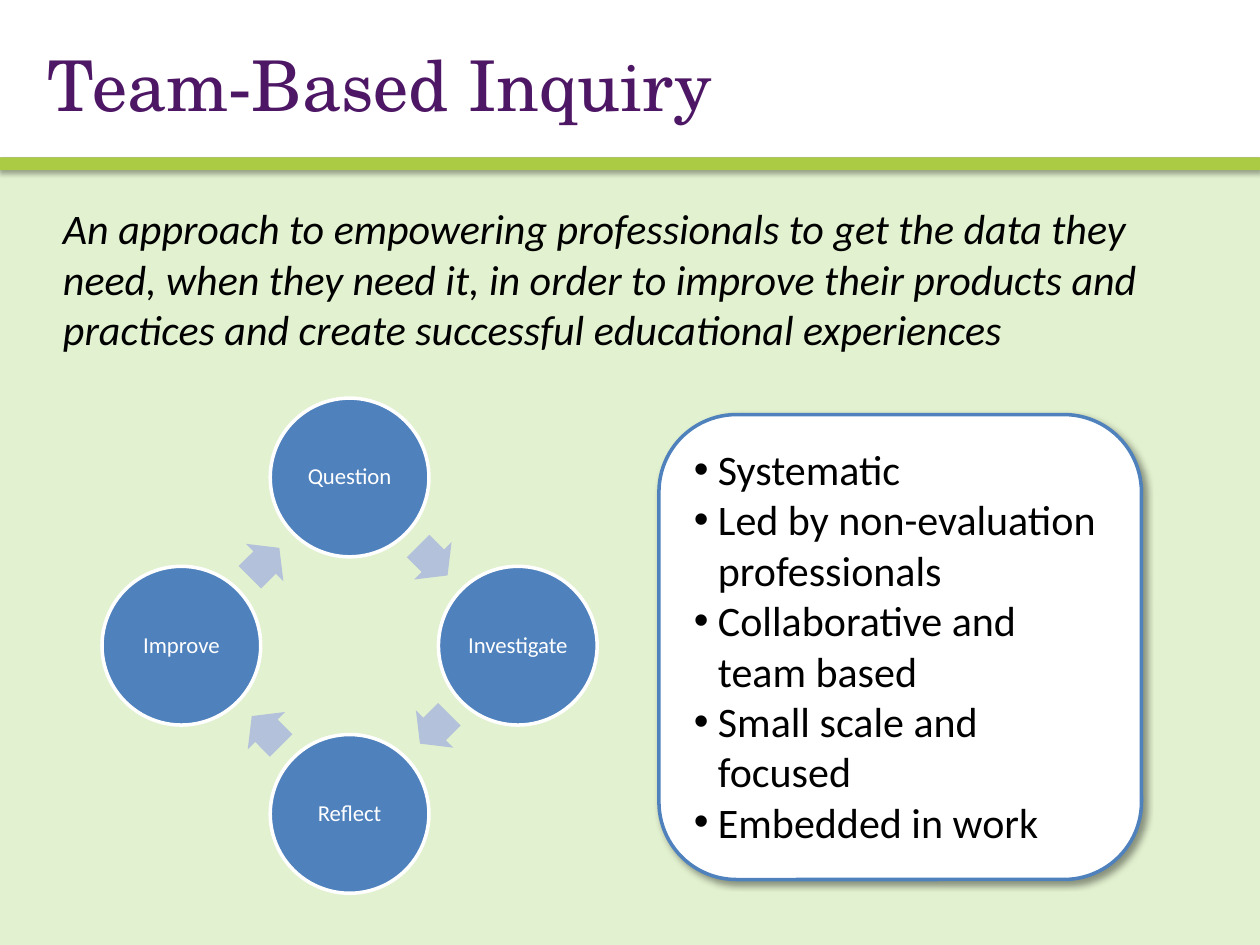
from dataclasses import dataclass
from math import cos, radians, sin

from lxml import etree
from pptx import Presentation
from pptx.dml.color import RGBColor
from pptx.enum.shapes import MSO_SHAPE
from pptx.enum.text import MSO_ANCHOR, MSO_AUTO_SIZE, PP_ALIGN
from pptx.oxml.ns import qn
from pptx.util import Inches, Pt

RECTANGLE = MSO_SHAPE.RECTANGLE
OVAL = MSO_SHAPE.OVAL
ARROW = MSO_SHAPE.RIGHT_ARROW
ROUNDED = MSO_SHAPE.ROUNDED_RECTANGLE
TOP, MIDDLE = MSO_ANCHOR.TOP, MSO_ANCHOR.MIDDLE
LEFT, CENTER = PP_ALIGN.LEFT, PP_ALIGN.CENTER
FIT_SHAPE = MSO_AUTO_SIZE.SHAPE_TO_FIT_TEXT


@dataclass(frozen=True)
class Theme:
    background: str = "E2F1CF"
    white: str = "FFFFFF"
    black: str = "000000"
    green: str = "ABCB45"
    purple: str = "4E1765"
    blue: str = "4F81BD"
    pale_blue: str = "B3C1DB"
    heading_font: str = "TeX Gyre Schola"
    body_font: str = "Calibri"
    title_size: int = 40
    body_size: int = 24
    step_size: int = 13
    line_width: int = 2


THEME = Theme()
BAND_SHADOW = {"alpha": 35, "blur": 3.1, "distance": 1.8, "angle": 90}
CARD_SHADOW = {"alpha": 40, "blur": 4, "distance": 3, "angle": 45}

TITLE = "Team-Based Inquiry"
SUMMARY = (
    "An approach to empowering professionals to get the data they need, "
    "when they need it, in order to improve their products and practices "
    "and create successful educational experiences"
)
STEPS = ["Question", "Investigate", "Reflect", "Improve"]
TRAITS = [
    "Systematic",
    "Led by non-evaluation professionals",
    "Collaborative and team based",
    "Small scale and focused",
    "Embedded in work",
]


def color(value):
    return RGBColor.from_string(value)


def add_shadow(shape, alpha, blur, distance, angle):
    effects = shape._element.spPr.find(qn("a:effectLst"))
    outer = etree.SubElement(
        effects, qn("a:outerShdw"), blurRad=str(Pt(blur)),
        dist=str(Pt(distance)), dir=str(angle * 60000), rotWithShape="0")
    tint = etree.SubElement(outer, qn("a:srgbClr"), val=THEME.black)
    etree.SubElement(tint, qn("a:alpha"), val=str(alpha * 1000))


def add_figure(slide, kind, box, fill, line=None, shadow=None):
    shape = slide.shapes.add_shape(kind, *map(Inches, box))
    shape.shadow.inherit = False
    shape.fill.solid()
    shape.fill.fore_color.rgb = color(fill)
    if line:
        shape.line.color.rgb = color(line)
        shape.line.width = Pt(THEME.line_width)
    else:
        shape.line.fill.background()
    if shadow:
        add_shadow(shape, **shadow)
    return shape


def write_text(shape, lines, frame_format, font_format, font_color, paragraph_format):
    frame = shape.text_frame
    frame.word_wrap = True
    for name, value in frame_format.items():
        setattr(frame, name, value)
    for index, line in enumerate(lines):
        paragraph = frame.add_paragraph() if index else frame.paragraphs[0]
        for name, value in paragraph_format.items():
            setattr(paragraph, name, value)
        run = paragraph.add_run()
        run.text = line
        for name, value in font_format.items():
            setattr(run.font, name, value)
        run.font.color.rgb = color(font_color)


def margins(size):
    sides = ("left", "top", "right", "bottom")
    return {f"margin_{side}": Inches(size) for side in sides}


def add_bullet(paragraph, indent):
    properties = paragraph._p.get_or_add_pPr()
    properties.set("marL", str(Inches(indent)))
    properties.set("indent", str(-Inches(indent)))
    etree.SubElement(properties, qn("a:buFont"), typeface="Arial")
    etree.SubElement(properties, qn("a:buChar"), char="•")


def add_header(slide, left, top, width, height):
    stripe = 0.1
    band = height - stripe
    add_figure(slide, RECTANGLE, (left, top, width, band), THEME.white,
               shadow=BAND_SHADOW)
    add_figure(slide, RECTANGLE, (left, top + band, width, stripe), THEME.green,
               shadow=BAND_SHADOW)
    title_box = (left + 0.28, top + 0.3, width - 0.53, 0.81)
    title = slide.shapes.add_textbox(*map(Inches, title_box))
    write_text(title, [TITLE], {"vertical_anchor": MIDDLE},
               {"name": THEME.heading_font, "size": Pt(THEME.title_size)},
               THEME.purple, {"line_spacing": 0.9})


def add_summary(slide, *box):
    summary = slide.shapes.add_textbox(*map(Inches, box))
    write_text(summary, [SUMMARY], margins(0.04),
               {"name": THEME.body_font, "size": Pt(THEME.body_size), "italic": True},
               THEME.black, {"space_before": Pt(6)})


def add_cycle(slide, left, top, size):
    diameter = 1.26
    arrow_width, arrow_height = 0.33, 0.42
    radius = (size - diameter) / 2
    arrow_radius = radius * cos(radians(45))
    center_x, center_y = left + size / 2, top + size / 2

    def box_at(angle, distance, width, height):
        x = center_x + distance * cos(radians(angle))
        y = center_y + distance * sin(radians(angle))
        return x - width / 2, y - height / 2, width, height

    turn = 360 / len(STEPS)
    for index, step in enumerate(STEPS):
        # Step circle, clockwise from the top
        angle = -90 + index * turn
        circle = add_figure(slide, OVAL, box_at(angle, radius, diameter, diameter),
                            THEME.blue, THEME.white)
        write_text(circle, [step], {"vertical_anchor": MIDDLE, **margins(0.02)},
                   {"name": THEME.body_font, "size": Pt(THEME.step_size)},
                   THEME.white, {"alignment": CENTER, "line_spacing": 0.9})
        # Arrow to the next step, just short of halfway
        arrow_box = box_at(angle + turn / 2 - 0.6, arrow_radius,
                           arrow_width, arrow_height)
        arrow = add_figure(slide, ARROW, arrow_box, THEME.pale_blue)
        arrow.adjustments[0], arrow.adjustments[1] = 0.6, 0.5
        arrow.rotation = 45 + index * turn


def add_traits(slide, *box):
    card = add_figure(slide, ROUNDED, box, THEME.white, THEME.blue, CARD_SHADOW)
    write_text(card, TRAITS, {"vertical_anchor": TOP, "auto_size": FIT_SHAPE},
               {"name": THEME.body_font, "size": Pt(THEME.body_size)},
               THEME.black, {"alignment": LEFT})
    for paragraph in card.text_frame.paragraphs:
        add_bullet(paragraph, 0.19)


def main():
    presentation = Presentation()
    presentation.slide_width, presentation.slide_height = Inches(10), Inches(7.5)
    slide = presentation.slides.add_slide(presentation.slide_layouts[6])
    slide.background.fill.solid()
    slide.background.fill.fore_color.rgb = color(THEME.background)

    add_header(slide, 0, 0, 10, 1.35)
    add_summary(slide, 0.46, 1.57, 9.07, 1.72)
    add_cycle(slide, 0.81, 3.16, 3.93)
    add_traits(slide, 5.23, 3.29, 3.83, 3.69)
    presentation.save("out.pptx")


if __name__ == "__main__":
    main()
